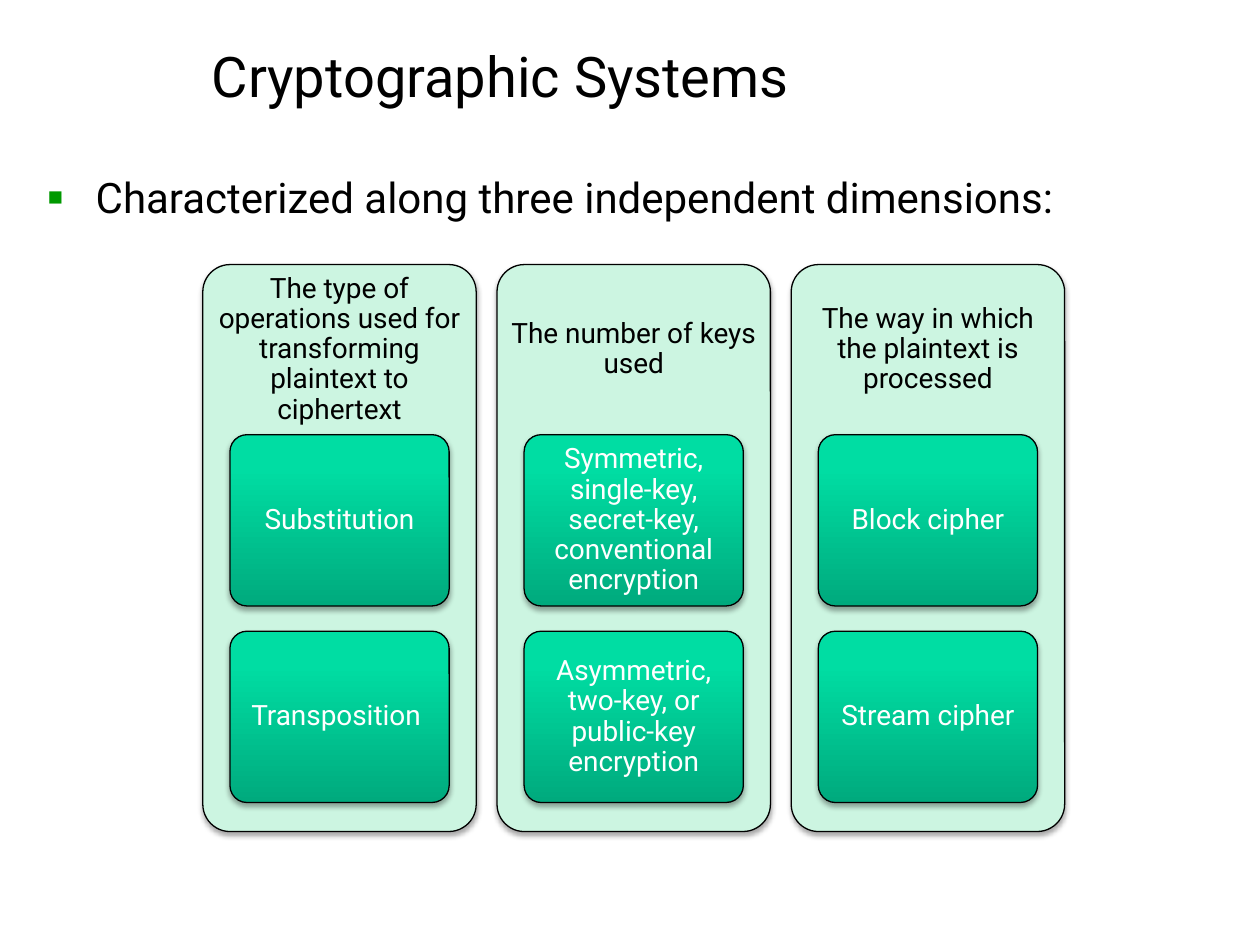
from copy import deepcopy

from lxml import etree
from pptx import Presentation
from pptx.dml.color import RGBColor
from pptx.enum.shapes import MSO_SHAPE
from pptx.enum.text import MSO_ANCHOR, MSO_AUTO_SIZE, PP_ALIGN
from pptx.oxml import parse_xml
from pptx.oxml.ns import nsdecls, qn
from pptx.util import Inches, Pt

ROUND = MSO_SHAPE.ROUNDED_RECTANGLE
TOP, MIDDLE, BOTTOM = MSO_ANCHOR.TOP, MSO_ANCHOR.MIDDLE, MSO_ANCHOR.BOTTOM
LEFT, CENTER = PP_ALIGN.LEFT, PP_ALIGN.CENTER
FIXED = MSO_AUTO_SIZE.NONE

BLACK = RGBColor(0x00, 0x00, 0x00)
WHITE = RGBColor(0xFF, 0xFF, 0xFF)
PALE = RGBColor(0xCC, 0xF5, 0xE1)
BULLET = RGBColor(0x00, 0x99, 0x00)
STOPS = [
    (0, RGBColor(0x00, 0xAA, 0x7D)),
    (0.8, RGBColor(0x00, 0xDD, 0xA3)),
    (1, RGBColor(0x00, 0xDE, 0xA4)),
]
FONT = "Roboto"

COLUMNS = [
    ("The type of operations used for transforming plaintext to ciphertext",
     ["Substitution", "Transposition "]),
    ("The number of keys used",
     ["Symmetric, single-key, secret-key, conventional encryption",
      "Asymmetric, two-key, or public-key encryption"]),
    ("The way in which the plaintext is processed",
     ["Block cipher", "Stream cipher"]),
]


def assign(target, values):
    for name, value in values.items():
        setattr(target, name, value)


def write(shape, text, size, color, anchor=MIDDLE, align=CENTER,
          inset=(0.1, 0.05), spacing=1.0):
    frame = shape.text_frame
    frame.text = text
    side, edge = map(Inches, inset)
    assign(frame, {
        "word_wrap": True, "auto_size": FIXED, "vertical_anchor": anchor,
        "margin_left": side, "margin_right": side,
        "margin_top": edge, "margin_bottom": edge,
    })
    para = frame.paragraphs[0]
    assign(para, {"alignment": align, "line_spacing": spacing,
                  "space_before": Pt(0)})
    assign(para.runs[0].font, {"name": FONT, "size": Pt(size)})
    para.runs[0].font.color.rgb = color
    return para


def place(shape, left, top, width, height):
    assign(shape, {"left": Inches(left), "top": Inches(top),
                   "width": Inches(width), "height": Inches(height)})


def add_bullet(para):
    props = para._p.get_or_add_pPr()
    props.set("marL", str(Inches(0.38)))
    props.set("indent", str(Inches(-0.38)))
    color = etree.SubElement(props, qn("a:buClr"))
    etree.SubElement(color, qn("a:srgbClr"), val=str(BULLET))
    etree.SubElement(props, qn("a:buSzPct"), val="60000")
    etree.SubElement(props, qn("a:buChar"), char="■")


def add_shadow(shape):
    shape.shadow.inherit = False
    effects = shape._element.spPr.find(qn("a:effectLst"))
    effects.append(parse_xml(
        f'<a:outerShdw {nsdecls("a")} blurRad="{Pt(3.1)}" dist="{Pt(1.8)}" '
        'dir="5400000" rotWithShape="0"><a:srgbClr val="000000">'
        '<a:alpha val="35000"/></a:srgbClr></a:outerShdw>'))


def fill_fade(shape):
    shape.fill.gradient()
    shape.fill.gradient_angle = 90
    stops = next(shape._element.spPr.iter(qn("a:gsLst")))
    stops.append(deepcopy(stops[-1]))
    for stop, (position, color) in zip(shape.fill.gradient_stops, STOPS):
        stop.position = position
        stop.color.rgb = color


def add_card(slide, left, top, width, height):
    card = slide.shapes.add_shape(
        ROUND, Inches(left), Inches(top), Inches(width), Inches(height))
    card.adjustments[0] = 0.1
    card.line.color.rgb = BLACK
    card.line.width = Pt(0.75)
    add_shadow(card)
    return card


def add_column(slide, left, heading, items):
    top, width = 2.1, 2.17
    panel = add_card(slide, left, top, width, 4.5)
    panel.fill.solid()
    panel.fill.fore_color.rgb = PALE
    label = slide.shapes.add_textbox(
        Inches(left), Inches(top), Inches(width), Inches(1.35))
    write(label, heading, 16, BLACK, inset=(0.07, 0.07), spacing=0.9)
    for row, item in enumerate(items):
        card = add_card(slide, left + 0.215, 3.45 + row * 1.56, 1.74, 1.36)
        fill_fade(card)
        write(card, item, 16, WHITE, inset=(0.08, 0.07), spacing=0.9)


def main():
    deck = Presentation()
    deck.slide_width, deck.slide_height = Inches(10), Inches(7.5)
    slide = deck.slides.add_slide(deck.slide_layouts[1])

    # Title and lead-in
    title, body = slide.placeholders
    place(title, 1.58, 0.23, 7.99, 0.68)
    write(title, "Cryptographic Systems", 32, BLACK, BOTTOM, LEFT)
    place(body, 0.28, 1.31, 9.42, 1)
    lead = write(body, "Characterized along three independent dimensions:",
                 24, BLACK, TOP, LEFT)
    add_bullet(lead)

    # One column for each dimension
    for index, (heading, items) in enumerate(COLUMNS):
        add_column(slide, 1.61 + index * 2.335, heading, items)

    deck.save("out.pptx")


if __name__ == "__main__":
    main()
